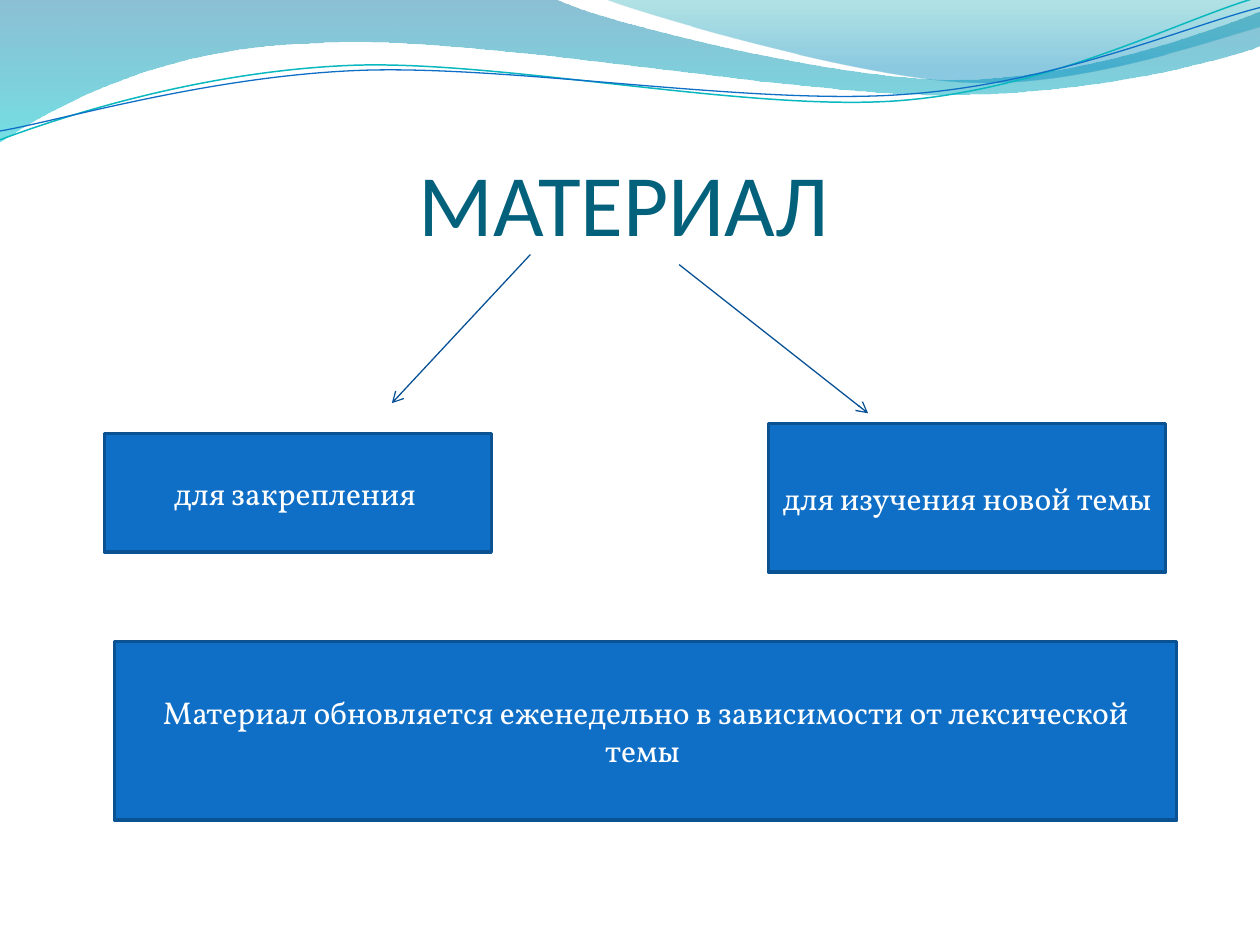
from lxml.etree import SubElement
from pptx import Presentation
from pptx.dml.color import RGBColor
from pptx.enum.shapes import MSO_CONNECTOR as Connector, MSO_SHAPE as Shape
from pptx.enum.text import MSO_ANCHOR as Anchor, MSO_AUTO_SIZE as AutoSize, PP_ALIGN as Align
from pptx.oxml.ns import qn
from pptx.util import Inches, Pt

COLORS = {
    "deep_teal": "0074A1",
    "turquoise": "00C6CF",
    "sea_green": "00A1A9",
    "sky": "008BBF",
    "teal_line": "0AB8BF",
    "blue": "0F6FC6",
    "title": "04617B",
    "arrow": "095295",
    "border": "0B5292",
    "white": "FFFFFF",
}

LEFT_WAVE = [
    (0, 0), (4.4, -0.01),
    (4.76, 0.17, 6.64, 0.63, 7.58, 0.63),
    (8.53, 0.63, 9.58, 0.26, 10, 0.09),
    (10.01, 0.36),
    (9.83, 0.44, 8.7, 0.76, 7.46, 0.75),
    (6.22, 0.75, 3.82, 0.28, 2.57, 0.34),
    (1.29, 0.36, 0.46, 0.83, -0.01, 1.13),
    (0, 0),
]
RIGHT_WAVE = [
    (4.79, -0.01),
    (5.09, 0.11, 6.82, 0.62, 7.69, 0.65),
    (8.56, 0.69, 9.61, 0.32, 10, 0.21),
    (10, 0), (4.79, -0.01),
]
TEAL_RIPPLE = [
    (0, 1.11),
    (0.48, 0.93, 1.58, 0.57, 2.77, 0.52),
    (3.95, 0.47, 5.93, 0.89, 7.13, 0.8),
    (8.33, 0.71, 9.38, 0.15, 9.98, -0.02),
]
BLUE_RIPPLE = [
    (0, 1.04),
    (0.47, 0.96, 1.64, 0.61, 2.83, 0.56),
    (4.03, 0.51, 5.97, 0.84, 7.17, 0.75),
    (8.36, 0.67, 9.41, 0.21, 10, 0.06),
]


def rgb(name):
    return RGBColor.from_string(COLORS[name])


def set_line(outlined, color, width):
    outlined.line.color.rgb = rgb(color)
    outlined.line.width = Pt(width)


def write_text(frame, text, size, font, color, align, anchor):
    frame.word_wrap = True
    frame.auto_size = AutoSize.NONE
    frame.vertical_anchor = anchor
    paragraph = frame.paragraphs[0]
    paragraph.alignment = align
    run = paragraph.add_run()
    run.text = text
    run.font.size = Pt(size)
    run.font.name = font
    run.font.color.rgb = rgb(color)


def bend(outline, step, segment):
    step.tag = qn("a:cubicBezTo")
    for point in list(step):
        step.remove(point)
    for x, y in zip(segment[::2], segment[1::2]):
        SubElement(step, qn("a:pt"), x=str(Inches(x) - outline.left), y=str(Inches(y) - outline.top))


def add_outline(slide, segments, closed):
    corners = [(Inches(segment[-2]), Inches(segment[-1])) for segment in segments]
    builder = slide.shapes.build_freeform(*corners[0])
    builder.add_line_segments(corners[1:], close=closed)
    outline = builder.convert_to_shape()
    outline.shadow.inherit = False
    for step, segment in zip(outline.element.xpath(".//a:lnTo"), segments[1:]):
        if len(segment) == 6:
            curve = SubElement(step.getparent(), qn("a:cubicBezTo"))
            step.getparent().replace(step, curve)
            bend(outline, curve, segment)
    return outline


def add_wave(slide, segments, stops):
    wave = add_outline(slide, segments, closed=True)
    wave.line.fill.background()
    wave.fill.gradient()
    wave.fill.gradient_angle = 270
    for stop, (position, color, opacity) in zip(wave.fill.gradient_stops, stops):
        stop.position = position
        stop.color.rgb = rgb(color)
    for tint, (position, color, opacity) in zip(wave.element.xpath(".//a:gs/a:srgbClr"), stops):
        SubElement(tint, qn("a:alpha"), val=str(opacity * 1000))


def add_ripple(slide, segments, color, width):
    ripple = add_outline(slide, segments, closed=False)
    ripple.fill.background()
    set_line(ripple, color, width)


def add_title(slide, text):
    title = slide.shapes.title
    title.left, title.top, title.width, title.height = map(Inches, (0.5, 0.77, 9, 1.25))
    frame = title.text_frame
    frame.margin_left = Inches(2.82)
    frame.margin_right = 0
    frame.margin_top = Inches(0.05)
    frame.margin_bottom = 0
    write_text(frame, text, size=50, font="Calibri", color="title",
               align=Align.LEFT, anchor=Anchor.BOTTOM)


def add_box(slide, text, left, top, width, height):
    box = slide.shapes.add_shape(Shape.RECTANGLE, *map(Inches, (left, top, width, height)))
    box.shadow.inherit = False
    box.fill.solid()
    box.fill.fore_color.rgb = rgb("blue")
    set_line(box, "border", 2)
    write_text(box.text_frame, text, size=18, font="Vollkorn", color="white",
               align=Align.CENTER, anchor=Anchor.MIDDLE)


def add_arrow(slide, *ends):
    arrow = slide.shapes.add_connector(Connector.STRAIGHT, *map(Inches, ends))
    set_line(arrow, "arrow", 0.75)
    SubElement(arrow.element.xpath(".//a:ln")[0], qn("a:tailEnd"), type="arrow")
    SubElement(arrow.element.spPr, qn("a:effectLst"))


def main():
    deck = Presentation()
    deck.slide_width, deck.slide_height = Inches(10), Inches(7.5)
    slide = deck.slides.add_slide(deck.slide_layouts[5])

    add_wave(slide, LEFT_WAVE, [(0, "deep_teal", 45), (1, "turquoise", 55)])
    add_wave(slide, RIGHT_WAVE, [(0, "sea_green", 30), (0.8, "sky", 45)])
    add_ripple(slide, TEAL_RIPPLE, "teal_line", 0.85)
    add_ripple(slide, BLUE_RIPPLE, "blue", 0.75)

    add_title(slide, "МАТЕРИАЛ")
    add_arrow(slide, 4.21, 2.02, 3.11, 3.2)
    add_box(slide, "для закрепления ", 0.83, 3.44, 3.07, 0.94)
    add_box(slide, "для изучения новой темы ", 6.1, 3.36, 3.15, 1.18)
    add_arrow(slide, 5.39, 2.1, 6.89, 3.28)
    add_box(slide, "Материал обновляется еженедельно в зависимости от лексической темы ",
            0.91, 5.09, 8.43, 1.42)

    deck.save("out.pptx")


if __name__ == "__main__":
    main()
